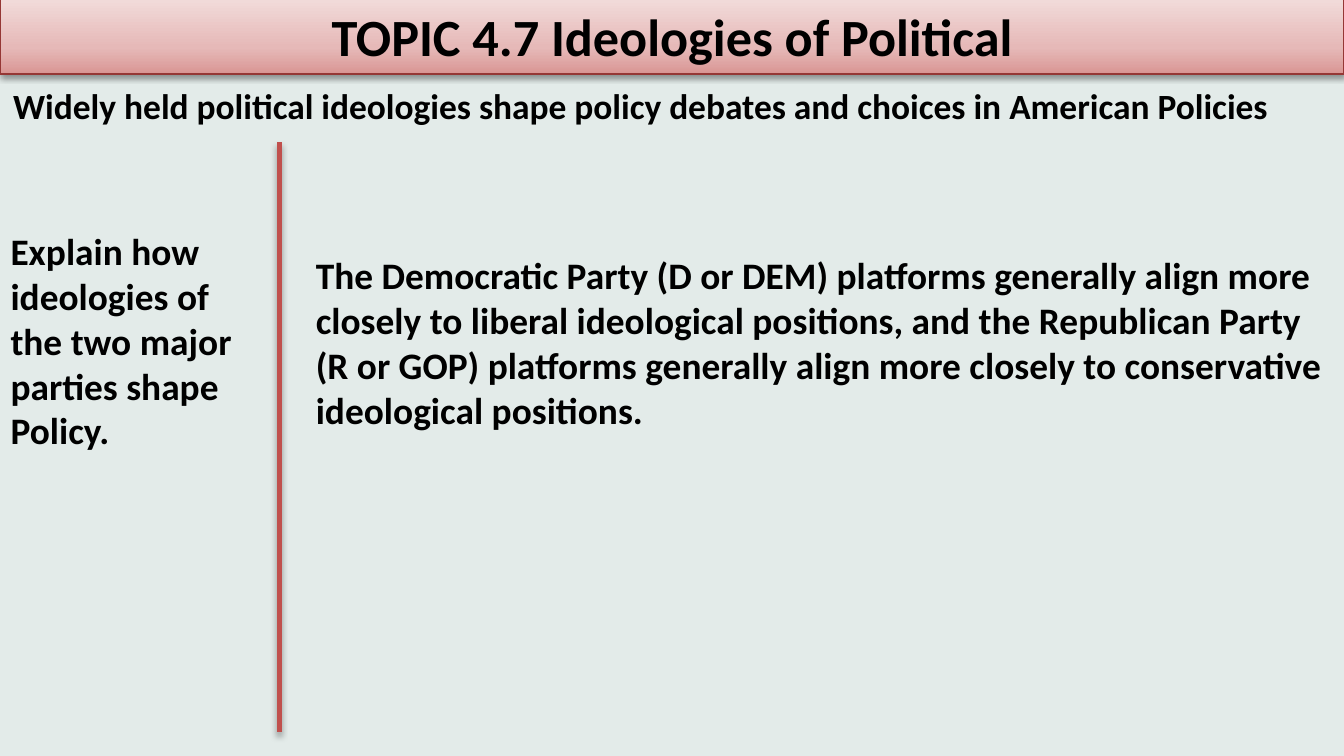
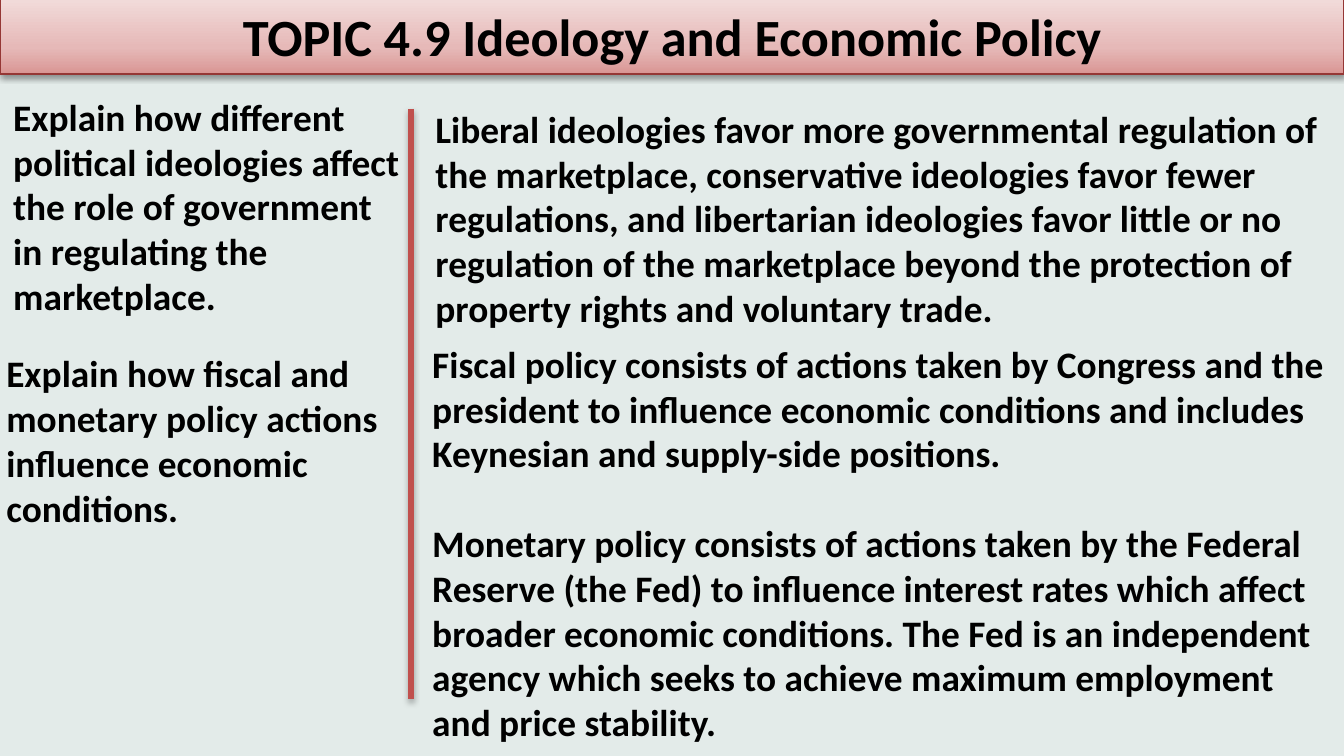
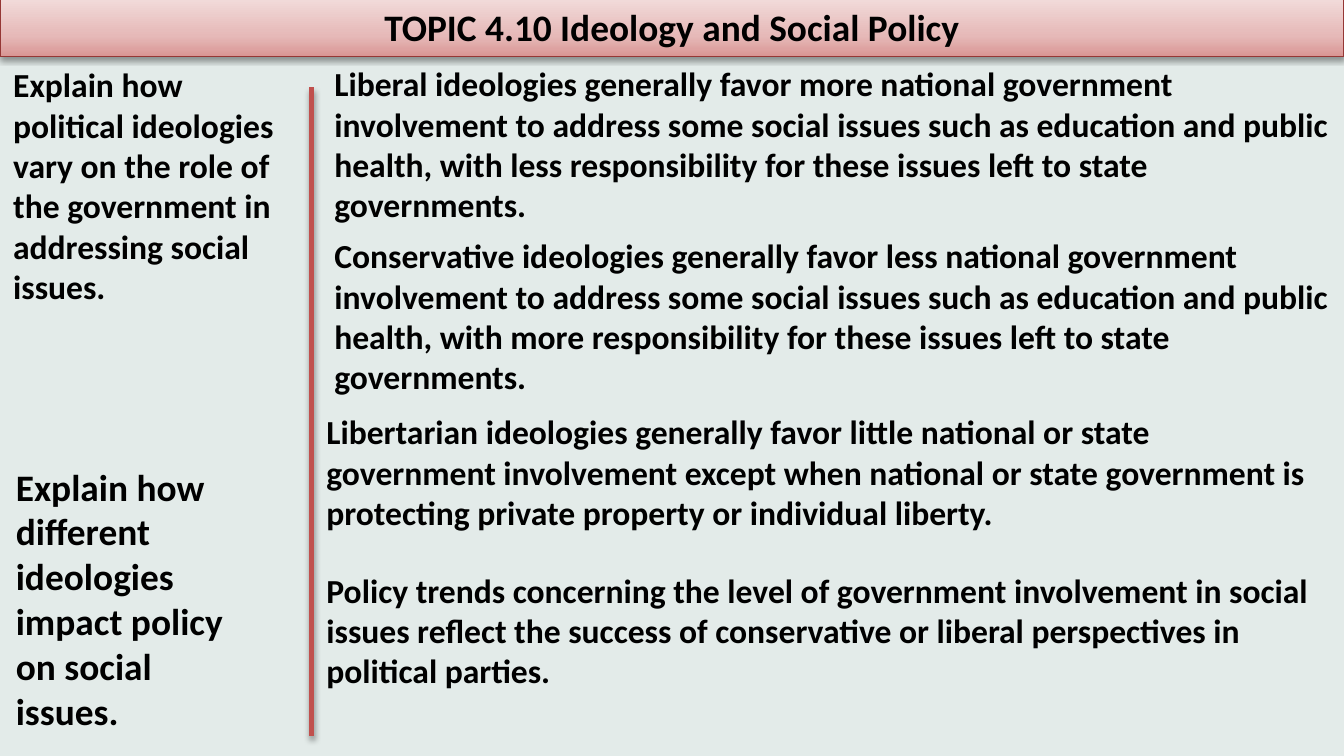
from copy import deepcopy
from dataclasses import dataclass

from lxml import etree
from pptx import Presentation
from pptx import util as u
from pptx.dml.color import RGBColor
from pptx.enum import shapes, text
from pptx.oxml.ns import qn

FONT = "Calibri"
INK = "000000"
PAPER = "E3EBE9"
RULE = "C0504D"
BAND_EDGE = "953735"
BAND_STOPS = [(0, "D99694"), (0.35, "E6B9B8"), (1, "F2DCDB")]
SLIDE_WIDTH, SLIDE_HEIGHT = 25.4, 14.29


@dataclass
class Passage:
    """A block of text; lengths in cm, size and gap in points."""
    left: float
    top: float
    width: float
    height: float
    paragraphs: list[str]
    size: float = 20
    gap: float = 0


@dataclass
class Divider:
    x: float
    top: float
    bottom: float


@dataclass
class Topic:
    title: str
    divider: Divider
    passages: list[Passage]
    band_height: float = 1.45
    title_size: float = 28


TOPICS = [
    Topic(
        "TOPIC 4.7 Ideologies of Political",
        Divider(5.28, 2.69, 13.84),
        [
            Passage(-0.05, 4.19, 5.13, 4.52, [
                "Explain how ideologies of",
                "the two major parties shape",
                "Policy."]),
            Passage(5.72, 4.65, 19.69, 3.68, [
                "The Democratic Party (D or DEM) platforms generally align more "
                "closely to liberal ideological positions, and the Republican "
                "Party (R or GOP) platforms generally align more closely to "
                "conservative ideological positions."]),
            Passage(0, 1.47, 25.4, 1.07, [
                "Widely held political ideologies shape policy debates and "
                "choices in American Policies"], size=19),
        ],
    ),
    Topic(
        "TOPIC 4.9 Ideology and Economic Policy",
        Divider(7.77, 2.06, 13.21),
        [
            Passage(0, 1.65, 7.87, 4.52, [
                "Explain how different political ideologies affect the role of "
                "government in regulating the",
                "marketplace."]),
            Passage(7.98, 1.88, 17.42, 4.52, [
                "Liberal ideologies favor more governmental regulation of the "
                "marketplace, conservative ideologies favor fewer regulations, "
                "and libertarian ideologies favor little or no regulation of "
                "the marketplace beyond the protection of property rights and "
                "voluntary trade."]),
            Passage(-0.13, 6.5, 8.33, 3.68, [
                "Explain how fiscal and",
                "monetary policy actions",
                "influence economic",
                "conditions."]),
            Passage(7.92, 6.32, 17.48, 7.95, [
                "Fiscal policy consists of actions taken by Congress and the "
                "president to influence economic conditions and includes "
                "Keynesian and supply-side positions.",
                "Monetary policy consists of actions taken by the Federal "
                "Reserve (the Fed) to influence interest rates which affect "
                "broader economic conditions. The Fed is an independent agency "
                "which seeks to achieve maximum employment and price "
                "stability."], gap=24),
        ],
    ),
    Topic(
        "TOPIC 4.10 Ideology and Social Policy",
        Divider(5.89, 1.65, 13.92),
        [
            Passage(0, 1.09, 5.72, 4.88, [
                "Explain how political ideologies vary on the role of the "
                "government in addressing social issues."], size=18),
            Passage(6.07, 1.07, 19.35, 3.33, [
                "Liberal ideologies generally favor more national government "
                "involvement to address some social issues such as education "
                "and public health, with less responsibility for these issues "
                "left to state governments."], size=18),
            Passage(0.05, 8.64, 5.13, 5.38, [
                "Explain how different ideologies impact policy on social "
                "issues."]),
            Passage(6.07, 4.32, 19.33, 3.33, [
                "Conservative ideologies generally favor less national "
                "government involvement to address some social issues such as "
                "education and public health, with more responsibility for "
                "these issues left to state governments."], size=18),
            Passage(5.92, 7.65, 19.15, 2.57, [
                "Libertarian ideologies generally favor little national or "
                "state government involvement except when national or state "
                "government is protecting private property or individual "
                "liberty."], size=18),
            Passage(5.92, 10.64, 19.33, 2.57, [
                "Policy trends concerning the level of government involvement "
                "in social issues reflect the success of conservative or "
                "liberal perspectives in political parties."], size=18),
        ],
        band_height=1.12,
        title_size=20,
    ),
]


def rgb(value: str) -> RGBColor:
    return RGBColor.from_string(value)


def write(frame, paragraphs: list[str], *, size: float, gap: float = 0,
          align=text.PP_ALIGN.LEFT) -> None:
    """Fill a text frame with bold paragraphs set apart by gap."""
    frame.word_wrap = True
    frame.auto_size = text.MSO_AUTO_SIZE.SHAPE_TO_FIT_TEXT
    for index, words in enumerate(paragraphs):
        paragraph = frame.add_paragraph() if index else frame.paragraphs[0]
        paragraph.alignment = align
        if index and gap:
            paragraph.space_before = u.Pt(gap)
        run = paragraph.add_run()
        run.text = words
        run.font.name = FONT
        run.font.size = u.Pt(size)
        run.font.bold = True
        run.font.color.rgb = rgb(INK)


def cast_shadow(item, opacity: int, distance: float) -> None:
    """Give a shape or connector a soft shadow straight below it."""
    effects = etree.SubElement(item._element.spPr, qn("a:effectLst"))
    shadow = etree.SubElement(
        effects, qn("a:outerShdw"), blurRad=str(u.Pt(3.1)),
        dist=str(u.Pt(distance)), dir="5400000", rotWithShape="0")
    color = etree.SubElement(shadow, qn("a:srgbClr"), val=INK)
    etree.SubElement(color, qn("a:alpha"), val=str(opacity * 1000))


def add_title_band(slide, topic: Topic) -> None:
    band = slide.shapes.add_shape(
        shapes.MSO_SHAPE.RECTANGLE, u.Cm(0), u.Cm(-0.05),
        u.Cm(SLIDE_WIDTH), u.Cm(topic.band_height))
    band.fill.gradient()
    band.fill.gradient_angle = 90
    stop_list = band._element.spPr.find(".//" + qn("a:gsLst"))
    stop_list.insert(1, deepcopy(stop_list[0]))
    for stop, (position, color) in zip(band.fill.gradient_stops, BAND_STOPS):
        stop.position = position
        stop.color.rgb = rgb(color)
    band.line.color.rgb = rgb(BAND_EDGE)
    band.line.width = u.Pt(0.75)
    cast_shadow(band, 38, 1.6)
    write(band.text_frame, [topic.title], size=topic.title_size,
          align=text.PP_ALIGN.CENTER)


def add_divider(slide, divider: Divider) -> None:
    rule = slide.shapes.add_connector(
        shapes.MSO_CONNECTOR.STRAIGHT, u.Cm(divider.x), u.Cm(divider.top),
        u.Cm(divider.x), u.Cm(divider.bottom))
    rule.line.color.rgb = rgb(RULE)
    rule.line.width = u.Pt(3)
    cast_shadow(rule, 35, 1.8)


def add_passage(slide, passage: Passage) -> None:
    box = slide.shapes.add_textbox(
        u.Cm(passage.left), u.Cm(passage.top),
        u.Cm(passage.width), u.Cm(passage.height))
    write(box.text_frame, passage.paragraphs, size=passage.size,
          gap=passage.gap)


def add_topic(deck, topic: Topic) -> None:
    slide = deck.slides.add_slide(deck.slide_layouts[6])
    slide.background.fill.solid()
    slide.background.fill.fore_color.rgb = rgb(PAPER)
    add_title_band(slide, topic)
    add_divider(slide, topic.divider)
    for passage in topic.passages:
        add_passage(slide, passage)


def main() -> None:
    deck = Presentation()
    deck.slide_width = u.Cm(SLIDE_WIDTH)
    deck.slide_height = u.Cm(SLIDE_HEIGHT)
    for topic in TOPICS:
        add_topic(deck, topic)
    deck.save("out.pptx")


if __name__ == "__main__":
    main()
